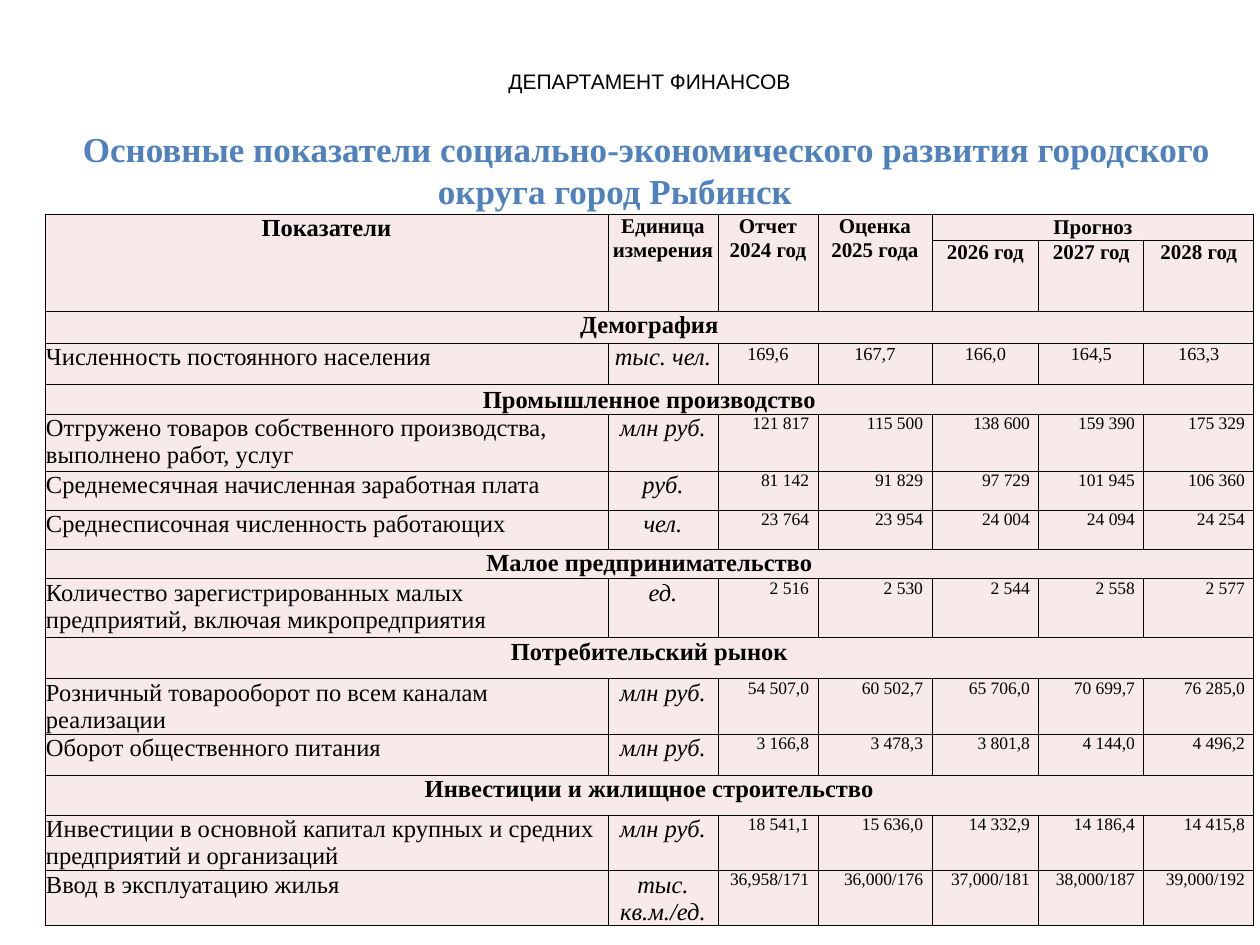
import lxml.etree
import pptx
import pptx.dml.color
import pptx.enum.text
import pptx.oxml.ns
import pptx.util

ALIGN = pptx.enum.text.PP_ALIGN
ANCHOR = pptx.enum.text.MSO_ANCHOR
PX = 914400 / 126
COLORS = {"title": "4F81BD", "text": "000000", "cell": "F7EAE9", "border": "000000"}

COLUMN_WIDTHS = [563, 110, 100, 114, 107, 105, 110]
ROW_HEIGHTS = [26, 71, 32, 41, 30, 57, 39, 39, 30, 59, 41, 55, 41, 40, 55, 55]

# A row with a single entry is a section heading across the table.
BODY_ROWS = [
    ["Демография"],
    ["Численность постоянного населения", "тыс. чел.",
     "169,6", "167,7", "166,0", "164,5", "163,3"],
    ["Промышленное производство"],
    ["Отгружено товаров собственного производства,\nвыполнено работ, услуг", "млн руб.",
     "121 817", "115 500", "138 600", "159 390", "175 329"],
    ["Среднемесячная начисленная заработная плата", "руб.",
     "81 142", "91 829", "97 729", "101 945", "106 360"],
    ["Среднесписочная численность работающих", "чел.",
     "23 764", "23 954", "24 004", "24 094", "24 254"],
    ["Малое предпринимательство"],
    ["Количество зарегистрированных малых предприятий, включая микропредприятия", "ед.",
     "2 516", "2 530", "2 544", "2 558", "2 577"],
    ["Потребительский рынок"],
    ["Розничный товарооборот по всем каналам реализации", "млн руб.",
     "54 507,0", "60 502,7", "65 706,0", "70 699,7", "76 285,0"],
    ["Оборот общественного питания", "млн руб.",
     "3 166,8", "3 478,3", "3 801,8", "4 144,0", "4 496,2"],
    ["Инвестиции и жилищное строительство"],
    ["Инвестиции в основной капитал крупных и средних предприятий и организаций", "млн руб.",
     "18 541,1", "15 636,0", "14 332,9", "14 186,4", "14 415,8"],
    ["Ввод в эксплуатацию жилья", "тыс. кв.м./ед.",
     "36,958/171", "36,000/176", "37,000/181", "38,000/187", "39,000/192"],
]


def px(length):
    return pptx.util.Emu(round(length * PX))


def rgb(name):
    return pptx.dml.color.RGBColor.from_string(COLORS[name])


def write_text(frame, text, size=14, color="text", font="Times New Roman",
               bold=False, italic=False, align=ALIGN.CENTER):
    """Fill a text frame, one paragraph per line of text."""
    for index, line in enumerate(text.split("\n")):
        paragraph = frame.add_paragraph() if index else frame.paragraphs[0]
        paragraph.alignment = align
        run = paragraph.add_run()
        run.text = line
        run.font.name = font
        run.font.size = pptx.util.Pt(size)
        run.font.bold = bold
        run.font.italic = italic
        run.font.color.rgb = rgb(color)


def add_borders(cell):
    properties = cell._tc.get_or_add_tcPr()
    for side in ("lnL", "lnR", "lnT", "lnB"):
        line = lxml.etree.SubElement(properties, pptx.oxml.ns.qn(f"a:{side}"),
                                     w=str(pptx.util.Pt(0.5)))
        fill = lxml.etree.SubElement(line, pptx.oxml.ns.qn("a:solidFill"))
        lxml.etree.SubElement(fill, pptx.oxml.ns.qn("a:srgbClr"), val=COLORS["border"])


class SlideBuilder:
    def __init__(self, presentation):
        self.slide = presentation.slides.add_slide(presentation.slide_layouts[5])

    def title(self, text, left, top, width, height):
        shape = self.slide.shapes.title
        shape.left, shape.top, shape.width, shape.height = map(px, (left, top, width, height))
        frame = shape.text_frame
        frame.word_wrap = True
        frame.auto_size = pptx.enum.text.MSO_AUTO_SIZE.NONE
        frame.vertical_anchor = ANCHOR.MIDDLE
        write_text(frame, text, size=20, color="title", bold=True)

    def label(self, text, left, top, width, height):
        box = self.slide.shapes.add_textbox(*map(px, (left, top, width, height)))
        box.text_frame.word_wrap = True
        write_text(box.text_frame, text, size=12, font="Arial")

    def table(self, left, top, widths, heights):
        """Add an empty table with every cell filled and bordered."""
        frame = self.slide.shapes.add_table(
            len(heights), len(widths),
            *map(px, (left, top, sum(widths), sum(heights))))
        table = frame.table
        table.first_row = table.horz_banding = False
        for column, width in zip(table.columns, widths):
            column.width = px(width)
        for row, height in zip(table.rows, heights):
            row.height = px(height)
        for cell in table.iter_cells():
            add_borders(cell)
            cell.fill.solid()
            cell.fill.fore_color.rgb = rgb("cell")
        return table

    def cell(self, cell, text, anchor=ANCHOR.TOP, side=1, top=1, **style):
        cell.margin_left = cell.margin_right = px(side)
        cell.margin_top, cell.margin_bottom = px(top), 0
        cell.vertical_anchor = anchor
        write_text(cell.text_frame, text, **style)

    def header(self, table):
        tall = ["Показатели", "Единица измерения", "Отчет\n2024 год", "Оценка 2025 года"]
        for column, text in enumerate(tall):
            table.cell(0, column).merge(table.cell(1, column))
            self.cell(table.cell(0, column), text, size=12 if column else 14, bold=True)
        table.cell(0, 4).merge(table.cell(0, 6))
        self.cell(table.cell(0, 4), "Прогноз", anchor=ANCHOR.MIDDLE, size=12, bold=True)
        for column, year in enumerate((2026, 2027, 2028), start=4):
            self.cell(table.cell(1, column), f"{year} год", size=12, bold=True)

    def section(self, table, row, text):
        table.cell(row, 0).merge(table.cell(row, len(table.columns) - 1))
        anchor = ANCHOR.BOTTOM if text.startswith("Промышленное") else ANCHOR.TOP
        self.cell(table.cell(row, 0), text, anchor=anchor, bold=True)

    def indicator(self, table, row, name, unit, values):
        self.cell(table.cell(row, 0), name, align=ALIGN.LEFT)
        self.cell(table.cell(row, 1), unit, italic=True)
        if unit == "тыс. чел.":
            style = {"size": 10.5}
        else:
            style = {"size": 10, "align": ALIGN.RIGHT, "side": 9, "top": 0}
        for column, value in enumerate(values, start=2):
            self.cell(table.cell(row, column), value, **style)


def main():
    presentation = pptx.Presentation()
    presentation.slide_width, presentation.slide_height = px(1260), px(945)
    builder = SlideBuilder(presentation)
    builder.title("\tОсновные показатели социально-экономического развития "
                  "городского округа город Рыбинск", -15, 125, 1260, 89)
    table = builder.table(45, 214, COLUMN_WIDTHS, ROW_HEIGHTS)
    builder.header(table)
    for row, (name, *details) in enumerate(BODY_ROWS, start=2):
        if details:
            builder.indicator(table, row, name, details[0], details[1:])
        else:
            builder.section(table, row, name)
    builder.label("ДЕПАРТАМЕНТ ФИНАНСОВ", 451, 62, 397, 38)
    presentation.save("out.pptx")


if __name__ == "__main__":
    main()
